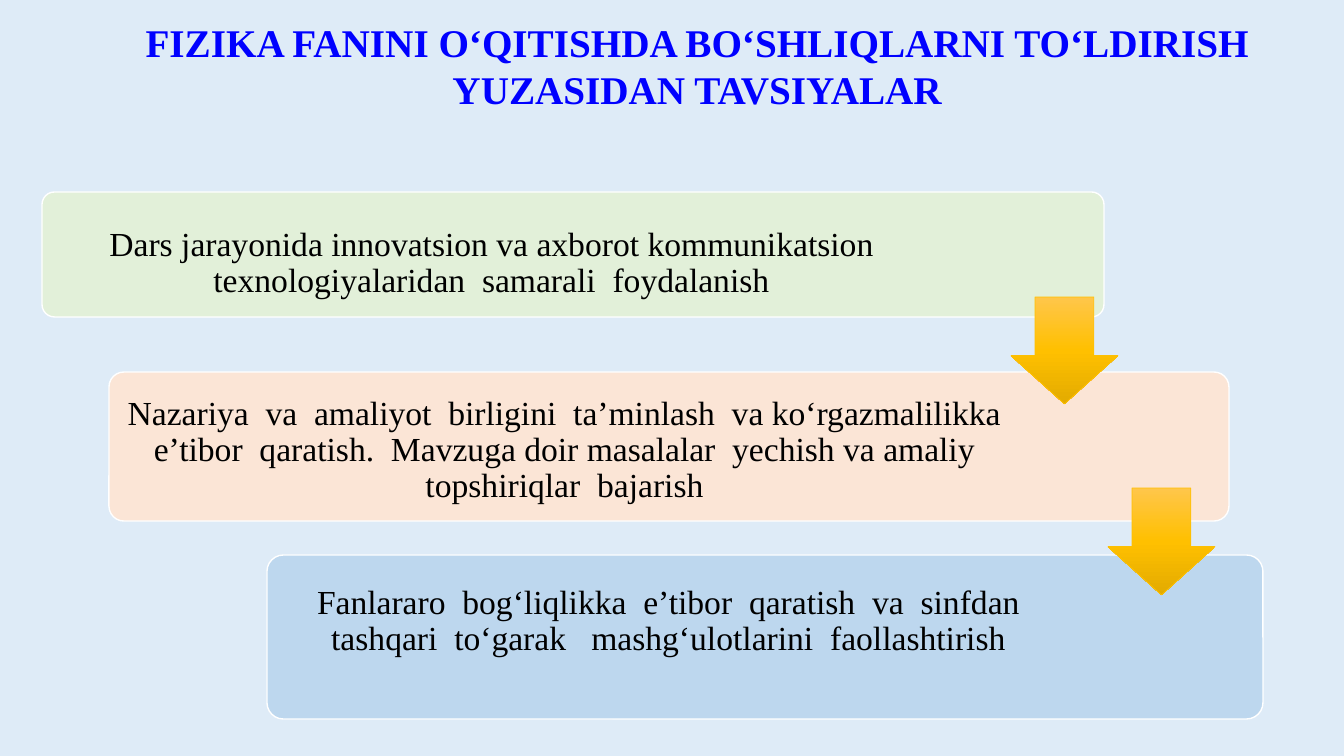
from copy import deepcopy
from dataclasses import dataclass

from pptx import Presentation
from pptx import util as u
from pptx.dml.color import RGBColor
from pptx.enum import shapes, text
from pptx.oxml.ns import qn

EMU_PER_PX = 914400 / 100.8
BACKGROUND = "DEEBF7"
ARROW_STOPS = [(0, "FFC64B"), (0.5, "FFC000"), (1, "E3AB00")]
ARROW_SIZE = 107


@dataclass
class Card:
    x: int
    y: int
    w: int
    h: int
    text_w: int
    text_top: int
    fill: str
    lines: list[str]


@dataclass
class Arrow:
    x: int
    y: int


CARDS = [
    Card(42, 192, 1062, 125, 899, 35, "E2F0D9",
         ["Dars jarayonida innovatsion va axborot kommunikatsion "
          "texnologiyalaridan  samarali  foydalanish"]),
    Card(109, 372, 1120, 149, 911, 24, "FBE5D6",
         ["Nazariya  va  amaliyot  birligini  ta’minlash  va ko‘rgazmalilikka "
          "e’tibor  qaratish.  Mavzuga doir masalalar  yechish va amaliy "
          "topshiriqlar  bajarish"]),
    Card(267, 555, 996, 164, 803, 30, "BDD7EE",
         ["Fanlararo  bog‘liqlikka  e’tibor  qaratish  va  sinfdan",
          "tashqari  to‘garak   mashg‘ulotlarini  faollashtirish"]),
]
ARROWS = [Arrow(1011, 297), Arrow(1108, 488)]


def px(n: int) -> u.Emu:
    return u.Emu(round(n * EMU_PER_PX))


def rgb(value: str) -> RGBColor:
    return RGBColor.from_string(value)


def add_shape(s, kind, x: int, y: int, w: int, h: int, *, fill: str | None = None,
              line: str | None = None, line_pt: float = 1, adj: tuple = ()):
    sp = s.shapes.add_shape(kind, px(x), px(y), px(w), px(h))
    sp.shadow.inherit = False
    for i, value in enumerate(adj):
        sp.adjustments[i] = value
    if fill:
        sp.fill.solid()
        sp.fill.fore_color.rgb = rgb(fill)
    if line:
        sp.line.color.rgb = rgb(line)
        sp.line.width = u.Pt(line_pt)
    else:
        sp.line.fill.background()
    return sp


def write(sp, lines: list[str], *, size: int, color: str = "000000",
          bold: bool = False, spacing: float = 1.0, top: int = 5) -> None:
    tf = sp.text_frame
    tf.word_wrap = True
    tf.vertical_anchor = text.MSO_ANCHOR.TOP
    tf.margin_left = tf.margin_right = px(10)
    tf.margin_top, tf.margin_bottom = px(top), px(5)
    for i, line in enumerate(lines):
        p = tf.paragraphs[0] if i == 0 else tf.add_paragraph()
        p.alignment = text.PP_ALIGN.CENTER
        p.line_spacing = spacing
        r = p.add_run()
        r.text = line
        r.font.name = "Times New Roman"
        r.font.size = u.Pt(size)
        r.font.bold = bold
        r.font.color.rgb = rgb(color)


def add_card(s, card: Card) -> None:
    add_shape(s, shapes.MSO_SHAPE.ROUNDED_RECTANGLE, card.x, card.y, card.w, card.h,
              fill=card.fill, line="FFFFFF", adj=(0.1,))
    box = s.shapes.add_textbox(px(card.x), px(card.y), px(card.text_w), px(card.h))
    write(box, card.lines, size=24, spacing=0.9, top=card.text_top)


def add_arrow(s, arrow: Arrow) -> None:
    sp = add_shape(s, shapes.MSO_SHAPE.DOWN_ARROW, arrow.x, arrow.y, ARROW_SIZE,
                   ARROW_SIZE, line="FFC000", line_pt=0.5, adj=(0.55, 0.45))
    sp.fill.gradient()
    sp.fill.gradient_angle = 270
    stops = sp._element.spPr.find(".//" + qn("a:gsLst"))
    stops.insert(1, deepcopy(stops[0]))
    for stop, (position, color) in zip(sp.fill.gradient_stops, ARROW_STOPS):
        stop.position = position
        stop.color.rgb = rgb(color)


def main() -> None:
    prs = Presentation()
    prs.slide_width, prs.slide_height = px(1344), px(756)
    s = prs.slides.add_slide(prs.slide_layouts[6])
    s.background.fill.solid()
    s.background.fill.fore_color.rgb = rgb(BACKGROUND)

    for card in CARDS:
        add_card(s, card)
    for arrow in ARROWS:
        add_arrow(s, arrow)
    title = add_shape(s, shapes.MSO_SHAPE.RECTANGLE, 104, 13, 1186, 105, fill=BACKGROUND)
    write(title, ["FIZIKA FANINI O‘QITISHDA BO‘SHLIQLARNI TO‘LDIRISH "
                  "YUZASIDAN TAVSIYALAR"], size=28, color="0000FF", bold=True)
    prs.save("out.pptx")


if __name__ == "__main__":
    main()
